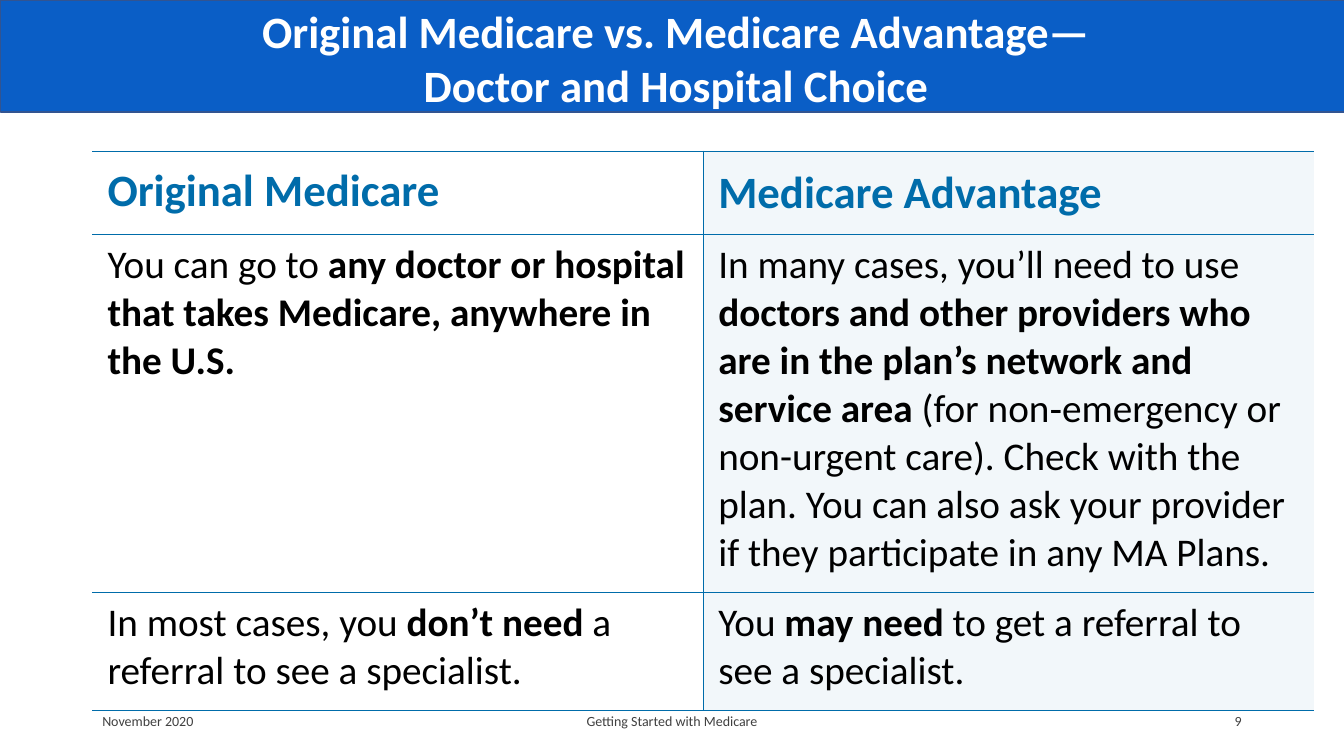
from lxml.etree import SubElement
from pptx import Presentation
from pptx.dml.color import RGBColor
from pptx.enum.shapes import MSO_SHAPE
from pptx.enum.text import MSO_ANCHOR, PP_ALIGN
from pptx.oxml import parse_xml
from pptx.oxml.ns import nsdecls, qn
from pptx.util import Pt

WHITE = RGBColor(0xFF, 0xFF, 0xFF)
BLACK = RGBColor(0, 0, 0)
GRAY = RGBColor(0x40, 0x40, 0x40)
BLUE = RGBColor(0x0A, 0x5E, 0xC6)
EDGE = RGBColor(0x32, 0x54, 0x91)
TEAL = RGBColor(0x00, 0x6C, 0xAA)

WIDE, HIGH = 960, 540
COLS = (436.3, 436.3)
ROWS = (59.5, 255.5, 84.5)
CELLS = [
    [["*Original Medicare"], ["*Medicare Advantage"]],
    [
        ["You can go to ",
         "*any doctor or hospital that takes Medicare, anywhere in the U.S."],
        ["In many cases, you’ll need to use ",
         "*doctors and other providers who are in the plan’s network and service area ",
         "(for non‑emergency or non-urgent care). Check with the plan. "
         "You can also ask your provider if they participate in any MA Plans."],
    ],
    [
        ["In most cases, you ", "*don’t need", " a referral to see a specialist."],
        ["You ", "*may need ", "to get a referral to see a specialist."],
    ],
]


def style(para, size, color, align=PP_ALIGN.LEFT):
    para.alignment = align
    para.font.name = "Calibri"
    para.font.size = Pt(size)
    para.font.color.rgb = color


def add_bar(slide):
    bar = slide.shapes.add_shape(MSO_SHAPE.RECTANGLE, Pt(0.5), 0, Pt(WIDE), Pt(80))
    bar.shadow.inherit = False
    bar.fill.solid()
    bar.fill.fore_color.rgb = BLUE
    bar.line.color.rgb = EDGE
    bar.line.width = Pt(1)


def add_text(slide, text, box, size, color, align, bold=False):
    frame = slide.shapes.add_textbox(*map(Pt, box)).text_frame
    frame.word_wrap = True
    frame.vertical_anchor = MSO_ANCHOR.MIDDLE
    para = frame.paragraphs[0]
    para.text = text
    style(para, size, color, align)
    para.font.bold = bold


def add_edges(cell, col):
    props = cell._tc.get_or_add_tcPr()
    drawn = "RTB" if col == 0 else "LTB"
    for spot, side in enumerate("LRTB"):
        fill = "<a:noFill/>"
        if side in drawn:
            fill = f'<a:solidFill><a:srgbClr val="{TEAL}"/></a:solidFill>'
        line = parse_xml(f'<a:ln{side} {nsdecls("a")} w="{Pt(1)}">{fill}</a:ln{side}>')
        props.insert(spot, line)


def fill_cell(cell, parts, row, col):
    head = row == 0
    cell.margin_left = Pt(10.8)
    cell.margin_top = Pt(2 if head and col == 0 else 5)
    cell.margin_right = cell.margin_bottom = Pt(5 if head else 10.8)
    cell.vertical_anchor = MSO_ANCHOR.MIDDLE if head else MSO_ANCHOR.TOP
    para = cell.text_frame.paragraphs[0]
    style(para, 32 if head else 28, TEAL if head else BLACK)
    for part in parts:
        run = para.add_run()
        run.text = part.removeprefix("*")
        run.font.bold = part.startswith("*")
    if col == 0:
        cell.fill.background()
    else:
        cell.fill.solid()
        cell.fill.fore_color.rgb = TEAL
        tint = cell._tc.tcPr.find(".//" + qn("a:srgbClr"))
        SubElement(tint, qn("a:alpha"), val="5000")
    add_edges(cell, col)


def add_grid(slide):
    frame = slide.shapes.add_table(
        len(ROWS), len(COLS), Pt(66), Pt(108), Pt(sum(COLS)), Pt(sum(ROWS)))
    table = frame.table
    table.first_row = table.horz_banding = False
    for col, width in enumerate(COLS):
        table.columns[col].width = Pt(width)
    for row, height in enumerate(ROWS):
        table.rows[row].height = Pt(height)
        for col, parts in enumerate(CELLS[row]):
            fill_cell(table.cell(row, col), parts, row, col)


def main():
    deck = Presentation()
    deck.slide_width, deck.slide_height = Pt(WIDE), Pt(HIGH)
    slide = deck.slides.add_slide(deck.slide_layouts[6])
    add_bar(slide)
    add_text(slide, "Original Medicare vs. Medicare Advantage—\vDoctor and Hospital Choice",
             (27, 1, 912, 80.6), 32, WHITE, PP_ALIGN.CENTER, True)
    add_grid(slide)
    for text, left, width, align in (
        ("November 2020", 66, 216, PP_ALIGN.LEFT),
        ("Getting Started with Medicare", 318, 324, PP_ALIGN.CENTER),
        ("9", 678, 216, PP_ALIGN.RIGHT),
    ):
        add_text(slide, text, (left, 500.4, width, 28.8), 10, GRAY, align)
    deck.save("out.pptx")


if __name__ == "__main__":
    main()
